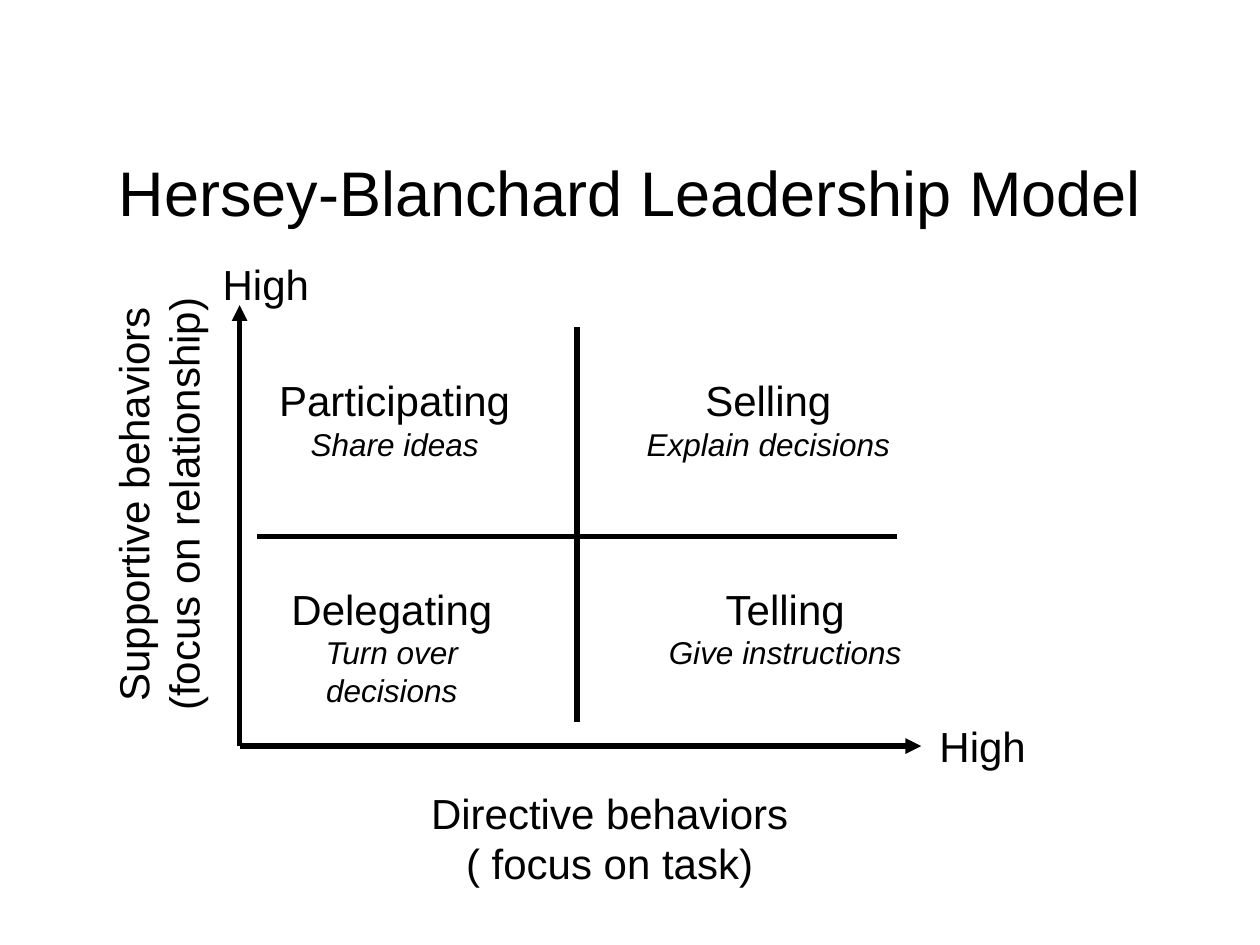
from lxml import etree
from pptx import Presentation
from pptx.dml.color import RGBColor
from pptx.enum.shapes import MSO_CONNECTOR
from pptx.enum.text import MSO_ANCHOR, PP_ALIGN
from pptx.oxml.ns import qn
from pptx.util import Cm, Pt

BLACK = "000000"
FONT = "Arial"
ORIGIN_X, ORIGIN_Y = 4.83, 15.04


def set_color(color_format, hex_color):
    color_format.rgb = RGBColor.from_string(hex_color)


def add_text(slide, box, lines, align=PP_ALIGN.CENTER, wrap=True):
    """Add a text box; each line is (text, size in points, italic)."""
    shape = slide.shapes.add_textbox(*(Cm(length) for length in box))
    frame = shape.text_frame
    frame.word_wrap = wrap
    frame.text = "\n".join(text for text, _, _ in lines)
    for paragraph, (_, size, italic) in zip(frame.paragraphs, lines):
        paragraph.alignment = align
        font = paragraph.runs[0].font
        font.name, font.size, font.italic = FONT, Pt(size), italic
        set_color(font.color, BLACK)
    return shape


def add_label(slide, box, *texts, align=PP_ALIGN.CENTER):
    lines = [(text, 24, False) for text in texts]
    return add_text(slide, box, lines, align, wrap=False)


def add_quadrant(slide, box, style, action):
    add_text(slide, box, [(style, 24, False), (action, 18, True)])


def add_line(slide, start, end, arrow=False):
    connector = slide.shapes.add_connector(
        MSO_CONNECTOR.STRAIGHT, *(Cm(length) for length in start + end))
    connector.line.width = Pt(3)
    set_color(connector.line.color, BLACK)
    if arrow:
        line = connector.line._get_or_add_ln()
        etree.SubElement(line, qn("a:tailEnd"), type="triangle")
    etree.SubElement(connector._element.spPr, qn("a:effectLst"))


def main():
    presentation = Presentation()
    presentation.slide_width, presentation.slide_height = Cm(25.4), Cm(19.05)
    slide = presentation.slides.add_slide(presentation.slide_layouts[6])

    add_text(slide, (1.27, 2.97, 22.86, 2.74),
             [("Hersey-Blanchard Leadership Model", 36, False)])

    top, bottom = 7.42, 11.63
    add_quadrant(slide, (5.21, bottom, 5.38, 2.79),
                 "Delegating", "Turn over decisions")
    add_quadrant(slide, (12.17, bottom, 7.32, 2.03),
                 "Telling", "Give instructions")
    add_quadrant(slide, (11.73, top, 7.52, 2.03),
                 "Selling", "Explain decisions")
    add_quadrant(slide, (4.45, top, 7.01, 2.03),
                 "Participating", "Share ideas")

    add_line(slide, (11.63, 6.6), (11.63, 14.55))
    add_line(slide, (18.08, 10.82), (5.18, 10.82))
    add_line(slide, (ORIGIN_X, ORIGIN_Y), (ORIGIN_X, 6.15), arrow=True)
    add_line(slide, (ORIGIN_X, ORIGIN_Y), (18.57, ORIGIN_Y), arrow=True)

    add_label(slide, (8.43, 15.75, 7.72, 2.29),
              "Directive behaviors", "( focus on task)")
    supportive = add_label(slide, (-1.24, 9.02, 8.84, 2.29),
                           "Supportive behaviors", "(focus on relationship)")
    supportive.rotation = 270
    supportive.text_frame.vertical_anchor = MSO_ANCHOR.MIDDLE
    for left, label_top in ((18.67, 14.4), (4.22, 5.08)):
        add_label(slide, (left, label_top, 2.26, 1.27), "High",
                  align=PP_ALIGN.RIGHT)

    presentation.save("out.pptx")


if __name__ == "__main__":
    main()
